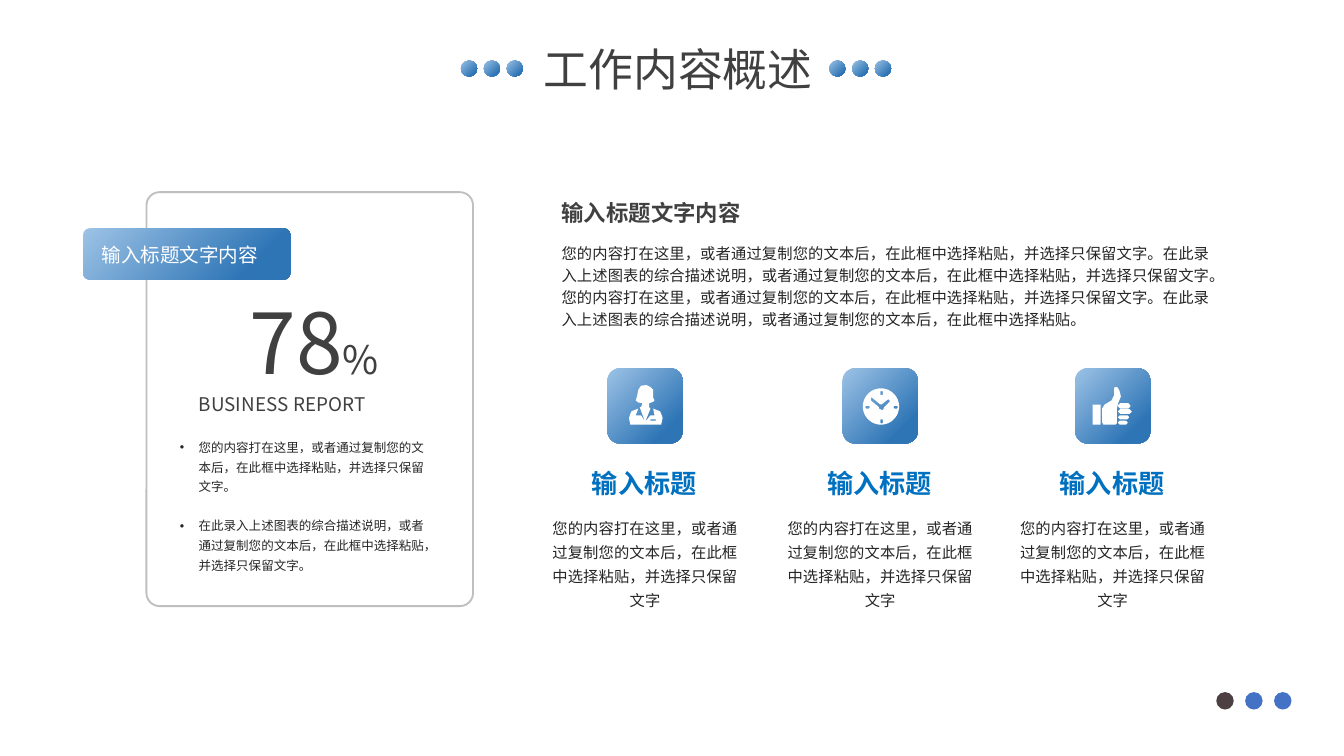
import math
from typing import NamedTuple

from pptx import Presentation
from pptx import util as u
from pptx.dml.color import RGBColor
from pptx.enum import shapes, text
from pptx.oxml.ns import qn
from lxml import etree

FONT = "Noto Sans CJK SC"
GRAY, DARK, WHITE = "404040", "262626", "FFFFFF"
GRADIENT = [(0, "9DC3E6"), (0.81, "2E75B6")]
ROUNDED, OVAL = shapes.MSO_SHAPE.ROUNDED_RECTANGLE, shapes.MSO_SHAPE.OVAL
CENTER, JUSTIFY = text.PP_ALIGN.CENTER, text.PP_ALIGN.JUSTIFY
ICON_TOP = 2.74

Contour = list[tuple[float, float]]


class Box(NamedTuple):
    x: float
    y: float
    w: float
    h: float

    def lengths(self):
        return [u.Inches(v) for v in self]


class Card(NamedTuple):
    x: float
    icon: list[Contour]


def rgb(value: str) -> RGBColor:
    return RGBColor.from_string(value)


def block(x1: float, y1: float, x2: float, y2: float, cut: float = 0) -> Contour:
    """Rectangle contour with its corners cut off."""
    if not cut:
        return [(x1, y1), (x2, y1), (x2, y2), (x1, y2)]
    return [(x1 + cut, y1), (x2 - cut, y1), (x2, y1 + cut), (x2, y2 - cut),
            (x2 - cut, y2), (x1 + cut, y2), (x1, y2 - cut), (x1, y1 + cut)]


def circle(cx: float, cy: float, radius: float, steps: int = 48) -> Contour:
    angles = [2 * math.pi * i / steps for i in range(steps)]
    return [(cx + radius * math.cos(a), cy + radius * math.sin(a)) for a in angles]


# Icon contours are in hundredths of an inch from the corner of their tile.
PERSON = [
    [(26, 26), (25, 29), (24, 29), (28, 40), (32, 30), (31, 29), (31, 26),
     (34, 25), (35, 24), (34, 22), (34, 16), (32, 14), (29, 12.5), (25, 13),
     (23, 16), (22, 21), (21, 24), (23, 25.5)],
    [(23, 30), (18, 32), (17, 34), (16, 37), (17, 42), (40, 42), (41, 37),
     (40, 34), (39, 32), (34, 30), (35, 35), (32, 35), (28, 40), (25, 35), (21, 35)],
    block(32, 38, 36, 39),
]
CLOCK = [
    circle(28.5, 28.5, 13.5),
    block(38, 28, 41, 30, 0.5),
    block(17, 28, 20, 30, 0.5),
    block(28, 17, 30, 20, 0.5),
    block(28, 38, 30, 41, 0.5),
    [(21, 22), (22, 22), (28, 27), (29, 27), (34, 23), (35, 24), (35, 25),
     (31, 29), (30, 31), (29, 31), (27, 30), (27, 29), (21, 24)],
]
THUMB = [
    block(13, 27, 19, 42),
    [(33, 17), (32, 15), (31, 14), (29.5, 14), (29, 15), (29, 20), (27, 24),
     (22, 27), (20, 30), (20, 40), (21, 42), (30, 42), (31, 41), (31, 30),
     (32, 26), (34, 21)],
    block(32, 26, 41, 30, 1.5),
    block(32, 30.5, 42, 34, 1.5),
    block(32, 35, 40, 38, 1.2),
    block(32, 39, 39, 42, 1.2),
]
CARDS = [Card(4.52, PERSON), Card(6.27, CLOCK), Card(8, THUMB)]


def add_shape(s, kind, box: Box, fill: str | None = None, line: str | None = None,
              adj: float | None = None):
    """Preset shape; without fill and line it gets the blue gradient."""
    sp = s.shapes.add_shape(kind, *box.lengths())
    sp.shadow.inherit = False
    if adj is not None:
        sp.adjustments[0] = adj
    if line:
        sp.fill.background()
        sp.line.color.rgb = rgb(line)
        sp.line.width = u.Pt(1)
        return sp
    sp.line.fill.background()
    if fill:
        sp.fill.solid()
        sp.fill.fore_color.rgb = rgb(fill)
    else:
        sp.fill.gradient()
        sp.fill.gradient_angle = 315
        for stop, (position, color) in zip(sp.fill.gradient_stops, GRADIENT):
            stop.position = position
            stop.color.rgb = rgb(color)
    return sp


def add_icon(s, x: float, y: float, contours: list[Contour]) -> None:
    points = [[(px * 10, py * 10) for px, py in c] for c in contours]
    builder = s.shapes.build_freeform(*points[0][0], scale=u.Inches(1) / 1000)
    builder.add_line_segments(points[0][1:], close=True)
    for contour in points[1:]:
        builder.move_to(*contour[0])
        builder.add_line_segments(contour[1:], close=True)
    sp = builder.convert_to_shape(u.Inches(x), u.Inches(y))
    sp.shadow.inherit = False
    sp.fill.solid()
    sp.fill.fore_color.rgb = rgb(WHITE)
    sp.line.fill.background()


def add_run(p, words: str, size: float, color: str, bold: bool = False) -> None:
    r = p.add_run()
    r.text = words
    r.font.size, r.font.name, r.font.color.rgb = u.Pt(size), FONT, rgb(color)
    if bold:
        r.font.bold = True
    ea = etree.SubElement(r.font._element, qn("a:ea"))
    ea.set("typeface", FONT)


def add_bullet(p, indent: float) -> None:
    pPr = p._p.get_or_add_pPr()
    pPr.set("marL", str(u.Inches(indent)))
    pPr.set("indent", str(-u.Inches(indent)))
    etree.SubElement(pPr, qn("a:buFont")).set("typeface", "Arial")
    etree.SubElement(pPr, qn("a:buChar")).set("char", "•")


def add_text(s, box: Box, *paragraphs: str, size: float, color: str = DARK, bold=False,
             align=None, spacing: float | None = None, wrap=True, gap: float = 0,
             bullet: float = 0, sp=None):
    """Fill a new text box, or the given shape, with paragraphs."""
    sp = sp or s.shapes.add_textbox(*box.lengths())
    sp.left, sp.top, sp.width, sp.height = box.lengths()
    tf = sp.text_frame
    tf.word_wrap = wrap
    tf.vertical_anchor = text.MSO_ANCHOR.TOP
    tf.auto_size = text.MSO_AUTO_SIZE.SHAPE_TO_FIT_TEXT
    for i, words in enumerate(paragraphs):
        p = tf.add_paragraph() if i else tf.paragraphs[0]
        p.alignment = align
        if spacing:
            p.line_spacing = spacing
        if i and gap:
            p.space_before = u.Pt(gap)
        if bullet:
            add_bullet(p, bullet)
        add_run(p, words, size, color, bold)
    return sp


def add_card(s, card: Card) -> None:
    add_shape(s, ROUNDED, Box(card.x, ICON_TOP, 0.56, 0.56))
    add_icon(s, card.x, ICON_TOP, card.icon)
    add_text(s, Box(card.x - 0.39, 3.43, 1.33, 0.34), "输入标题",
             size=14, color="0070C0", bold=True, align=CENTER)
    add_text(s, Box(card.x - 0.55, 3.77, 1.66, 0.82),
             "您的内容打在这里，或者通过复制您的文本后，在此框中选择粘贴，并选择只保留文字",
             size=8.25, align=CENTER, spacing=1.3)


def add_report_panel(s) -> None:
    add_shape(s, ROUNDED, Box(1.09, 1.43, 2.43, 3.08), line="BFBFBF", adj=0.04)
    add_shape(s, ROUNDED, Box(0.62, 1.7, 1.54, 0.38), adj=0.12)
    add_text(s, Box(0.66, 1.76, 1.43, 0.28), "输入标题文字内容",
             size=10.5, color=WHITE, align=JUSTIFY)
    figure = add_text(s, Box(1.76, 2.11, 1.17, 0.86), "78", size=45, color=GRAY, wrap=False)
    add_run(figure.text_frame.paragraphs[0], "%", 21, GRAY)
    add_text(s, Box(1.38, 2.87, 1.54, 0.27), "BUSINESS REPORT",
             size=10.13, color=GRAY, wrap=False)
    add_text(s, Box(1.24, 3.19, 2.06, 1.13),
             "您的内容打在这里，或者通过复制您的文本后，在此框中选择粘贴，并选择只保留文字。",
             "在此录入上述图表的综合描述说明，或者通过复制您的文本后，在此框中选择粘贴，并选择只保留文字。",
             size=6.75, spacing=1.3, gap=10.5, bullet=0.14)


def main() -> None:
    prs = Presentation()
    prs.slide_width = u.Inches(10)
    prs.slide_height = prs.slide_width * 9 // 16
    s = prs.slides.add_slide(prs.slide_layouts[5])

    add_text(s, Box(2, 0.26, 6.09, 0.5), "工作内容概述",
             size=24, color=GRAY, align=CENTER, sp=s.shapes.title)
    for start in (3.43, 6.17):
        for i in range(3):
            add_shape(s, OVAL, Box(start + 0.17 * i, 0.45, 0.12, 0.12))

    add_report_panel(s)

    add_text(s, Box(4.08, 1.43, 1.58, 0.3), "输入标题文字内容",
             size=12, color=GRAY, bold=True, align=JUSTIFY)
    advice = "您的内容打在这里，或者通过复制您的文本后，在此框中选择粘贴，并选择只保留文字。"
    summary = "在此录入上述图表的综合描述说明，或者通过复制您的文本后，在此框中选择粘贴"
    add_text(s, Box(4.08, 1.74, 5.13, 0.77),
             f"{advice}{summary}，并选择只保留文字。{advice}{summary}。", size=8.25, spacing=1.2)
    for card in CARDS:
        add_card(s, card)

    for i, color in enumerate(["4C4042", "4472C4", "4472C4"]):
        add_shape(s, OVAL, Box(9.05 + 0.215 * i, 5.15, 0.13, 0.13), fill=color)
    prs.save("out.pptx")


if __name__ == "__main__":
    main()
